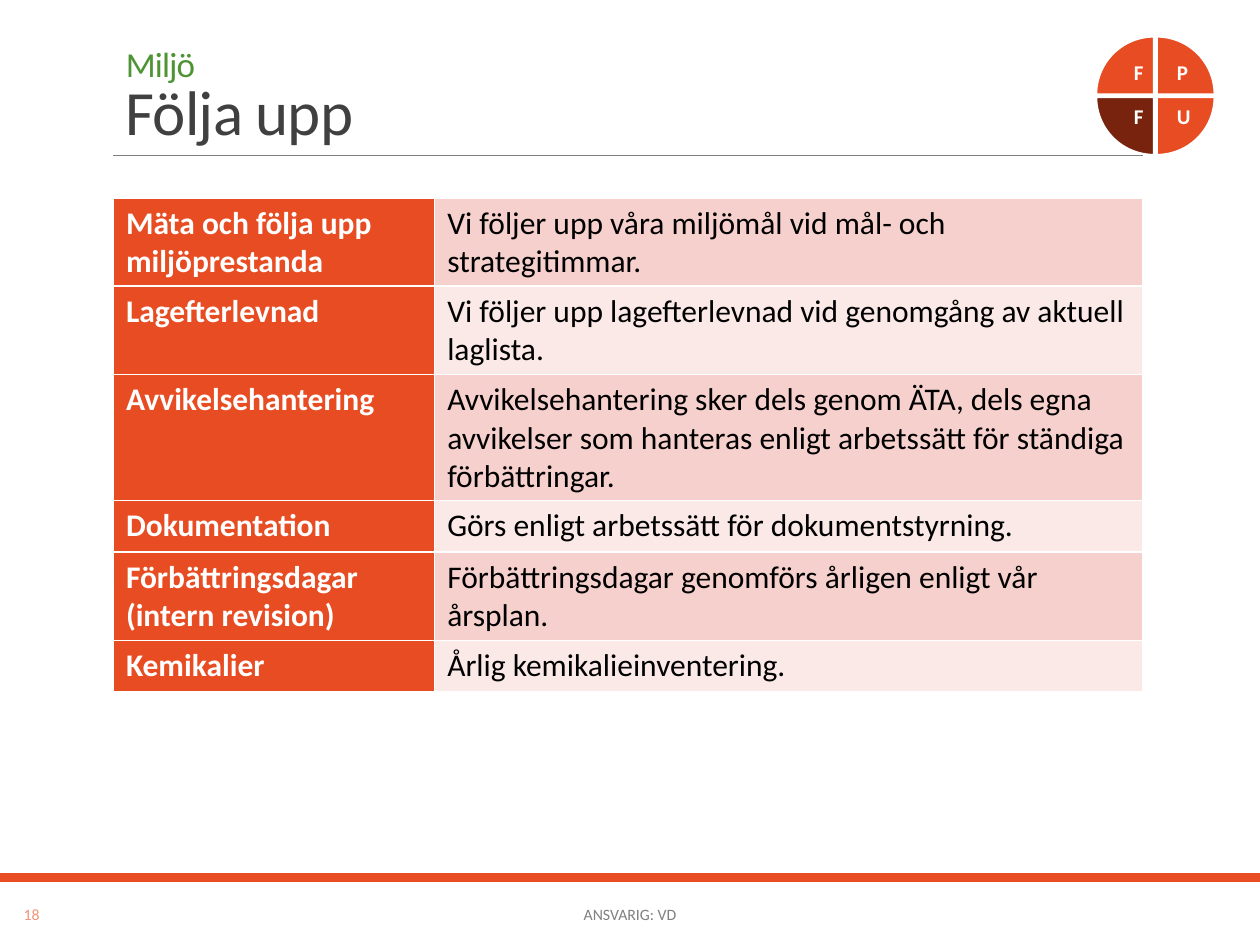
from lxml.etree import SubElement
from pptx import Presentation
from pptx.dml.color import RGBColor
from pptx.enum.shapes import MSO_CONNECTOR, MSO_SHAPE
from pptx.enum.text import MSO_ANCHOR as ANCHOR, PP_ALIGN as ALIGN
from pptx.oxml import parse_xml
from pptx.oxml.ns import nsdecls, qn
from pptx.util import Inches, Pt

COLORS = {
    "accent": "E84C22", "current": "78230D", "green": "4F9434",
    "title": "404040", "gray": "808080", "number": "F1947A",
    "band_dark": "F6D0CD", "band_light": "FBE9E8",
    "white": "FFFFFF", "black": "000000",
}
FONT = "Calibri"
TITLE = [("Miljö", 20, "green"), ("Följa upp", 36, "title")]
ROWS = [
    (["Mäta och följa upp miljöprestanda"],
     "Vi följer upp våra miljömål vid mål- och strategitimmar."),
    (["Lagefterlevnad"],
     "Vi följer upp lagefterlevnad vid genomgång av aktuell laglista."),
    (["Avvikelsehantering"],
     "Avvikelsehantering sker dels genom ÄTA, dels egna avvikelser som "
     "hanteras enligt arbetssätt för ständiga förbättringar."),
    (["Dokumentation"], "Görs enligt arbetssätt för dokumentstyrning."),
    (["Förbättringsdagar", "(intern revision)"],
     "Förbättringsdagar genomförs årligen enligt vår årsplan."),
    (["Kemikalier"], "Årlig kemikalieinventering."),
]
COL_WIDTHS = (2.55, 5.62)
ROW_HEIGHT = 0.41
# Letter, column, row and fill of each quarter, clockwise from top left
WHEEL = [("F", 0, 0, "accent"), ("P", 1, 0, "accent"),
         ("U", 1, 1, "accent"), ("F", 0, 1, "current")]
FOOTER = [("18", 0.04, 0.42, "number"), ("ANSVARIG: VD", 3.02, 3.96, "gray")]


def rgb(name):
    return RGBColor.from_string(COLORS[name])


def inches(*values):
    return [Inches(v) for v in values]


def add_run(p, text, size, color, bold=False):
    r = p.add_run()
    r.text = text
    for key, value in {"name": FONT, "size": Pt(size), "bold": bold}.items():
        setattr(r.font, key, value)
    r.font.color.rgb = rgb(color)
    return r


def add_box(slide, box, anchor, inset=None):
    tf = slide.shapes.add_textbox(*inches(*box)).text_frame
    tf.word_wrap = True
    tf.vertical_anchor = anchor
    if inset is not None:
        for side in ("left", "right", "top", "bottom"):
            setattr(tf, f"margin_{side}", Inches(inset))
    return tf


def add_shape(slide, kind, box, fill):
    s = slide.shapes.add_shape(kind, *inches(*box))
    s.shadow.inherit = False
    s.fill.solid()
    s.fill.fore_color.rgb = rgb(fill)
    s.line.fill.background()
    return s


def add_title(slide):
    p = add_box(slide, (0.9, 0.31, 8.25, 0.92), ANCHOR.BOTTOM).paragraphs[0]
    p.line_spacing = 0.85
    for i, (text, size, color) in enumerate(TITLE):
        if i:
            p.add_line_break()
        r = add_run(p, text, size, color)
        r._r.get_or_add_rPr().set("spc", "-50")


def add_rule(slide):
    line = slide.shapes.add_connector(
        MSO_CONNECTOR.STRAIGHT, *inches(0.9, 1.23, 9.07, 1.23))
    line.line.color.rgb = rgb("gray")
    line.line.width = Pt(0.5)
    SubElement(line._element.spPr, qn("a:effectLst"))


def fill_cell(cell, paragraphs, fill, color, bold):
    cell.fill.solid()
    cell.fill.fore_color.rgb = rgb(fill)
    tc_pr = cell._tc.get_or_add_tcPr()
    for i, side in enumerate("LRTB"):
        tc_pr.insert(i, parse_xml(
            f'<a:ln{side} {nsdecls("a")} w="12700"><a:solidFill>'
            f'<a:srgbClr val="{COLORS["white"]}"/></a:solidFill></a:ln{side}>'))
    tf = cell.text_frame
    for i, text in enumerate(paragraphs):
        p = tf.add_paragraph() if i else tf.paragraphs[0]
        add_run(p, text, 18, color, bold)


def add_routines(slide):
    table = slide.shapes.add_table(
        len(ROWS), 2, *inches(0.9, 1.57, sum(COL_WIDTHS),
                              ROW_HEIGHT * len(ROWS))).table
    for col, width in zip(table.columns, COL_WIDTHS):
        col.width = Inches(width)
    for i, (heading, text) in enumerate(ROWS):
        table.rows[i].height = Inches(ROW_HEIGHT)
        band = "band_light" if i % 2 else "band_dark"
        fill_cell(table.cell(i, 0), heading, "accent", "white", True)
        fill_cell(table.cell(i, 1), [text], band, "black", False)


def add_wheel(slide):
    left, top, size, step = 8.7, 0.29, 0.46, 0.48
    label_lefts, label_tops, label_size = (8.84, 9.18), (0.42, 0.77), 0.33
    for i, (letter, col, row, fill) in enumerate(WHEEL):
        s = add_shape(slide, MSO_SHAPE.PIE_WEDGE,
                      (left + col * step, top + row * step, size, size), fill)
        s.rotation = 90 * i
        s.line.color.rgb = rgb("white")
        s.line.width = Pt(1.25)
        box = (label_lefts[col], label_tops[row], label_size, label_size)
        p = add_box(slide, box, ANCHOR.MIDDLE, 0.16).paragraphs[0]
        p.alignment = ALIGN.CENTER
        p.line_spacing = 0.9
        add_run(p, letter, 12, "white", True)


def add_footer(slide):
    for text, left, width, color in FOOTER:
        tf = add_box(slide, (left, 7.06, width, 0.4), ANCHOR.MIDDLE)
        tf.paragraphs[0].alignment = ALIGN.CENTER
        add_run(tf.paragraphs[0], text, 9, color)


def main():
    prs = Presentation()
    prs.slide_width, prs.slide_height = inches(10, 7.5)
    slide = prs.slides.add_slide(prs.slide_layouts[6])
    add_shape(slide, MSO_SHAPE.RECTANGLE, (0, 6.93, 10, 0.07), "accent")
    add_rule(slide)
    add_title(slide)
    add_routines(slide)
    add_wheel(slide)
    add_footer(slide)
    prs.save("out.pptx")


if __name__ == "__main__":
    main()
